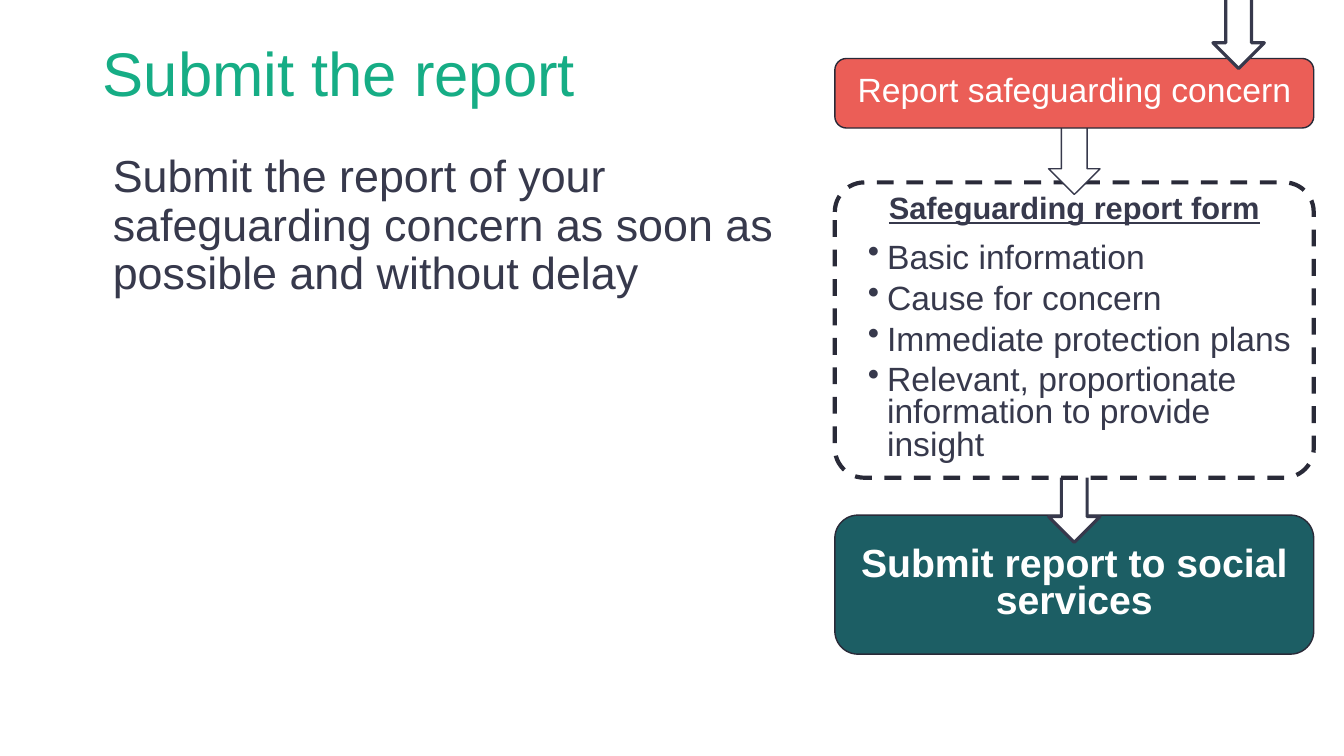
import pptx
import pptx.dml.color
import pptx.enum.dml
import pptx.enum.shapes
import pptx.enum.text
import pptx.oxml.ns
import pptx.util
import lxml.etree

PX = 9144
SHAPES = pptx.enum.shapes.MSO_SHAPE
ALIGN = pptx.enum.text.PP_ALIGN
ANCHOR = pptx.enum.text.MSO_ANCHOR
WHITE, INK, EDGE = "FFFFFF", "37394C", "292A38"
GREEN, RED, TEAL = "16AD85", "EB5E57", "1C5E64"


def colour(value):
    return pptx.dml.color.RGBColor.from_string(value)


def lengths(*values):
    return [pptx.util.Emu(value * PX) for value in values]


def write(box, lines, size, color=INK, bold=False, underline=False,
          align=ALIGN.LEFT, anchor=ANCHOR.TOP, spacing=0.8, after=0, indent=0):
    frame = box.text_frame
    frame.word_wrap = True
    frame.auto_size = pptx.enum.text.MSO_AUTO_SIZE.NONE
    frame.vertical_anchor = anchor
    for index, line in enumerate(lines):
        para = frame.paragraphs[0] if index == 0 else frame.add_paragraph()
        para.alignment = align
        para.line_spacing = spacing
        para.space_before = pptx.util.Pt(0)
        para.space_after = pptx.util.Pt(after)
        if indent:
            properties = para._p.get_or_add_pPr()
            properties.set("marL", str(indent * PX))
            properties.set("indent", str(-indent * PX))
            bullet = lxml.etree.SubElement(properties, pptx.oxml.ns.qn("a:buChar"))
            bullet.set("char", "•")
        span = para.add_run()
        span.text = line
        span.font.name = "Arial"
        span.font.size = pptx.util.Pt(size)
        span.font.bold = bold
        span.font.underline = underline
        span.font.color.rgb = colour(color)


class SlideBuilder:
    """Holds the deck style and the current slide, and adds its elements."""

    def __init__(self, deck):
        self.slide = deck.slides.add_slide(deck.slide_layouts[5])
        self.slide.background.fill.solid()
        self.slide.background.fill.fore_color.rgb = colour(WHITE)

    def title(self, bounds, text, **style):
        box = self.slide.shapes.title
        box.left, box.top, box.width, box.height = lengths(*bounds)
        write(box, [text], **style)

    def text(self, bounds, lines, **style):
        box = self.slide.shapes.add_textbox(*lengths(*bounds))
        write(box, lines, **style)

    def shape(self, kind, bounds, fill, line, weight):
        shape = self.slide.shapes.add_shape(kind, *lengths(*bounds))
        shape.shadow.inherit = False
        shape.fill.solid()
        shape.fill.fore_color.rgb = colour(fill)
        shape.line.color.rgb = colour(line)
        shape.line.width = pptx.util.Pt(weight)
        return shape

    def step(self, top, height, text, fill=WHITE, weight=1, **style):
        bounds = (828, top, 475, height)
        box = self.shape(SHAPES.ROUNDED_RECTANGLE, bounds, fill, EDGE, weight)
        write(box, [text], align=ALIGN.CENTER, **style)
        return box

    def arrow(self, left, top, height, weight=2.25):
        self.shape(SHAPES.DOWN_ARROW, (left, top, 51, height), WHITE, INK, weight)


def main():
    deck = pptx.Presentation()
    deck.slide_width, deck.slide_height = lengths(1333, 750)
    page = SlideBuilder(deck)

    page.title((92, 40, 698, 72), "Submit the report", size=44, color=GREEN,
               anchor=ANCHOR.MIDDLE, spacing=0.9)
    page.text((102, 148, 698, 405),
              ["Submit the report of your safeguarding concern as soon as "
               "possible and without delay"], size=32, spacing=0.9, after=6)

    page.step(511, 138, "Submit report to social services", fill=TEAL, size=28,
              color=WHITE, bold=True, anchor=ANCHOR.MIDDLE)
    page.arrow(1040, 469, 69)
    form = page.step(181, 293, "Safeguarding report form", weight=3, size=22,
                     bold=True, underline=True, after=6)
    form.adjustments[0] = 0.1
    form.line.dash_style = pptx.enum.dml.MSO_LINE.DASH
    page.arrow(1040, 113, 80, weight=1)
    page.step(58, 69, "Report safeguarding concern", fill=RED, size=24,
              color=WHITE, anchor=ANCHOR.MIDDLE)
    page.arrow(1203, -8, 76)
    page.text((851, 236, 451, 229),
              ["Basic information", "Cause for concern",
               "Immediate protection plans",
               "Relevant, proportionate information to provide insight"],
              size=24, anchor=ANCHOR.MIDDLE, after=6, indent=19)

    deck.save("out.pptx")


if __name__ == "__main__":
    main()
